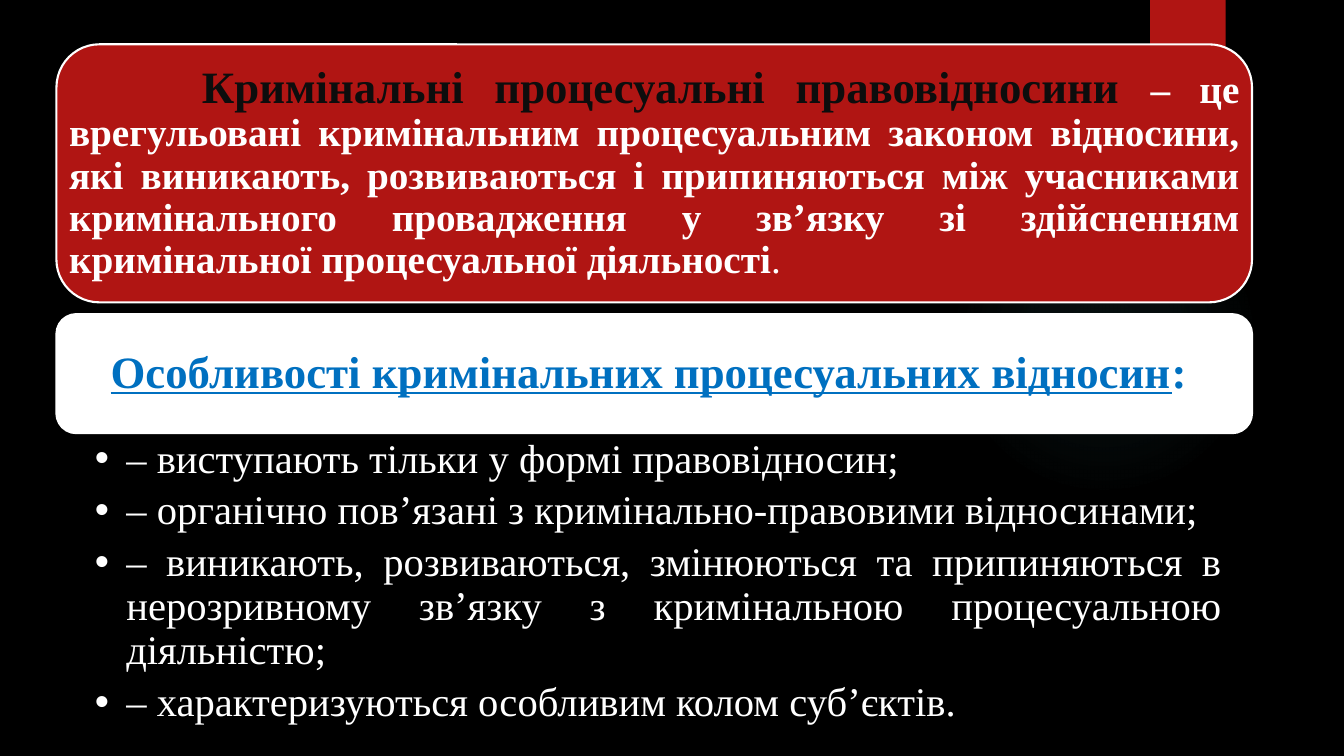
"""Build the slide on criminal procedural relations."""
from lxml.etree import fromstring
from pptx import Presentation
from pptx.dml.color import RGBColor
from pptx.enum.shapes import MSO_SHAPE
from pptx.enum.text import MSO_ANCHOR, MSO_AUTO_SIZE, PP_ALIGN
from pptx.oxml.ns import nsdecls
from pptx.util import Pt

BLACK = RGBColor(0, 0, 0)
INK = RGBColor(0x0D, 0x0D, 0x0D)
WHITE = RGBColor(0xFF, 0xFF, 0xFF)
RED = RGBColor(0xB0, 0x15, 0x13)
BLUE = RGBColor(0x00, 0x70, 0xC0)
TEAL = RGBColor(0x50, 0xB9, 0xC1)

TERM = [
    ("Кримінальні процесуальні правовідносини ", 32, INK, {"bold": True}),
    ("– це врегульовані кримінальним процесуальним законом відносини, "
     "які виникають, розвиваються і припиняються між учасниками "
     "кримінального провадження у зв’язку зі здійсненням "
     "кримінальної процесуальної діяльності", 28, WHITE, {"bold": True}),
    (".", 28, WHITE, {"bold": False}),
]
HEAD = [
    ("Особливості кримінальних процесуальних відносин", 32, BLUE,
     {"bold": True, "underline": True}),
    (": ", 32, BLUE, {"bold": True, "underline": False}),
]
TRAITS = [
    "– виступають тільки у формі правовідносин;",
    "– органічно пов’язані з кримінально-правовими відносинами;",
    "– виникають, розвиваються, змінюються та припиняються в "
    "нерозривному зв’язку з кримінальною процесуальною діяльністю;",
    "– характеризуються особливим колом суб’єктів.",
]
GLOW = [(0, 7), (36, 6), (69, 0)]

LEFT, WIDE = 40.3, 854
TERM_BOX = (LEFT, 31.7, WIDE, 184.3)
HEAD_BOX = (LEFT, 224.4, WIDE, 85)
LIST_BOX = (LEFT, 309.2, WIDE, 211)
TAB_BOX = (821.5, 0, 54, 90)
GLOW_BOX = (677.5, 131.8, 221.8, 221.8)
SIDES = ("left", "top", "width", "height")
EDGES = ("margin_left", "margin_top", "margin_right", "margin_bottom")


def apply(item, vals):
    """Set each named value on the item."""
    for name, val in vals.items():
        setattr(item, name, val)


def place(shape, box):
    """Move the shape to a box given in points."""
    apply(shape, {side: Pt(val) for side, val in zip(SIDES, box)})


def draw(slide, kind, box, fill, line=None):
    """Add a plain shape with a solid fill."""
    shape = slide.shapes.add_shape(kind, *map(Pt, box))
    shape.shadow.inherit = False
    shape.fill.solid()
    shape.fill.fore_color.rgb = fill
    if line is None:
        shape.line.fill.background()
    else:
        shape.line.color.rgb = line
        shape.line.width = Pt(1.5)
    return shape


def frame(shape, edges, anchor):
    """Prepare the text frame of a shape."""
    text = shape.text_frame
    apply(text, {"word_wrap": True, "auto_size": MSO_AUTO_SIZE.NONE,
                 "vertical_anchor": anchor})
    apply(text, {edge: Pt(val) for edge, val in zip(EDGES, edges)})
    return text


def write(para, runs, align, after=0):
    """Fill a paragraph with formatted runs."""
    apply(para, {"alignment": align, "line_spacing": 0.9,
                 "space_before": Pt(0), "space_after": Pt(after)})
    for words, size, color, style in runs:
        run = para.add_run()
        run.text = words
        apply(run.font, {"name": "Times New Roman", "size": Pt(size), **style})
        run.font.color.rgb = color


def shine(shape):
    """Give the shape a faint round gradient."""
    stops = "".join(
        f'<a:gs pos="{pos * 1000}"><a:srgbClr val="{TEAL}">'
        f'<a:alpha val="{alpha * 1000}"/></a:srgbClr></a:gs>'
        for pos, alpha in GLOW)
    grad = fromstring(
        f'<a:gradFill {nsdecls("a")}><a:gsLst>{stops}</a:gsLst>'
        '<a:path path="circle"><a:fillToRect l="50000" t="50000" '
        'r="50000" b="50000"/></a:path></a:gradFill>')
    props = shape.element.spPr
    props.replace(props.find("{*}solidFill"), grad)


def main():
    """Lay out the slide and save it."""
    deck = Presentation()
    deck.slide_width, deck.slide_height = Pt(960), Pt(540)
    slide = deck.slides.add_slide(deck.slide_layouts[1])
    back = slide.background.fill
    back.solid()
    back.fore_color.rgb = BLACK

    shine(draw(slide, MSO_SHAPE.OVAL, GLOW_BOX, TEAL))
    draw(slide, MSO_SHAPE.RECTANGLE, TAB_BOX, RED)
    card = draw(slide, MSO_SHAPE.ROUNDED_RECTANGLE, TERM_BOX, RED, WHITE)
    draw(slide, MSO_SHAPE.ROUNDED_RECTANGLE, HEAD_BOX, WHITE, WHITE)

    para = frame(card, (0, 0, 0, 0), MSO_ANCHOR.MIDDLE).paragraphs[0]
    para._p.get_or_add_pPr().set("indent", str(Pt(95)))
    write(para, TERM, PP_ALIGN.JUSTIFY)

    title, body = slide.shapes.title, slide.placeholders[1]
    for shape, box in ((title, HEAD_BOX), (body, LIST_BOX)):
        place(shape, box)
        slide.shapes.element.append(shape.element)
    text = frame(title, (9, 9, 9, 9), MSO_ANCHOR.MIDDLE)
    write(text.paragraphs[0], HEAD, PP_ALIGN.CENTER)

    text = frame(body, (27.4, 3.6, 20.9, 3.6), MSO_ANCHOR.TOP)
    for num, trait in enumerate(TRAITS):
        para = text.add_paragraph() if num else text.paragraphs[0]
        props = para._p.get_or_add_pPr()
        props.set("marL", str(Pt(22.5)))
        props.set("indent", str(-Pt(22.5)))
        write(para, [(trait, 29, WHITE, {})], PP_ALIGN.JUSTIFY, 5.8)
        para.font.size = Pt(29)
        para.font.color.rgb = WHITE

    deck.save("out.pptx")


if __name__ == "__main__":
    main()
